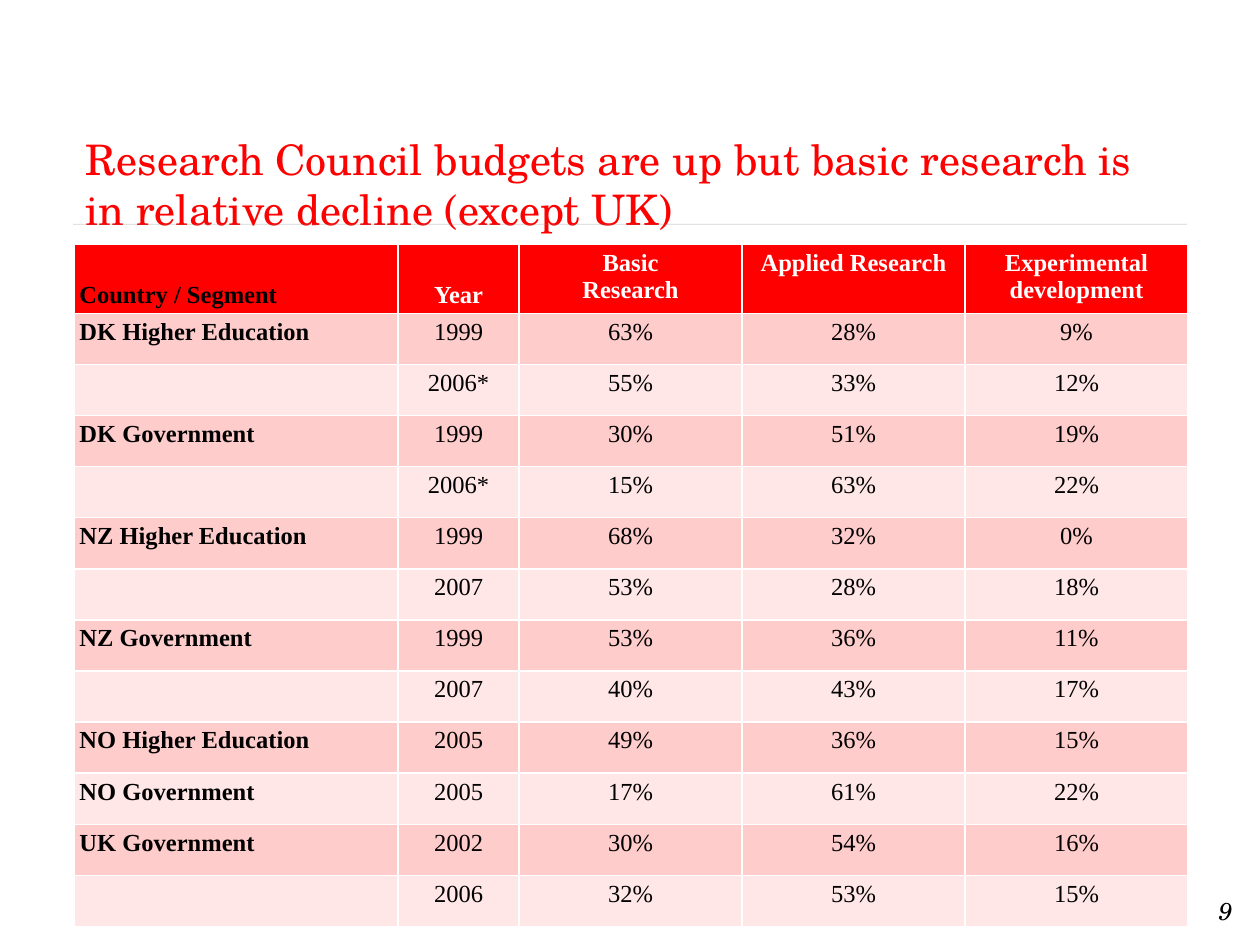
from pptx import Presentation
from pptx.dml.color import RGBColor
from pptx.enum.shapes import MSO_CONNECTOR as Connector
from pptx.enum.text import MSO_ANCHOR as Anchor, MSO_AUTO_SIZE as AutoSize, PP_ALIGN as Align
from pptx.oxml.ns import qn
from pptx.util import Inches, Pt
from lxml.etree import SubElement

SERIF = "TeX Gyre Schola"
TABLE_FONT = "Times New Roman"
RED, BLACK, WHITE, GREY = "FF0000", "000000", "FFFFFF", "808080"
BANDS = ("FFCCCC", "FFE7E7")

HEADINGS = ("Country / Segment", "Year", "Basic\nResearch",
            "Applied Research", "Experimental development")
BUDGETS = (
    ("DK Higher Education", "1999", 63, 28, 9),
    ("", "2006*", 55, 33, 12),
    ("DK Government", "1999", 30, 51, 19),
    ("", "2006*", 15, 63, 22),
    ("NZ Higher Education", "1999", 68, 32, 0),
    ("", "2007", 53, 28, 18),
    ("NZ Government", "1999", 53, 36, 11),
    ("", "2007", 40, 43, 17),
    ("NO Higher Education", "2005", 49, 36, 15),
    ("NO Government", "2005", 17, 61, 22),
    ("UK Government", "2002", 30, 54, 16),
    ("", "2006", 32, 53, 15),
)
COLUMN_WIDTHS = (2.57, 0.96, 1.77, 1.77, 1.77)
HEADER_HEIGHT, TABLE_HEIGHT = 0.5, 5.37


def color(hex_code):
    return RGBColor.from_string(hex_code)


def style(paragraph, font_name, size, hex_code, bold=False, italic=False, align=Align.LEFT):
    paragraph.alignment = align
    font = paragraph.font
    font.name, font.size = font_name, Pt(size)
    font.bold, font.italic = bold, italic
    font.color.rgb = color(hex_code)


def add_title(slide, text):
    title = slide.shapes.title
    title.left, title.top = Inches(0.58), Inches(1.17)
    title.width, title.height = Inches(8.83), Inches(0.58)
    frame = title.text_frame
    frame.text = text
    frame.auto_size = AutoSize.NONE
    frame.vertical_anchor = Anchor.MIDDLE
    style(frame.paragraphs[0], SERIF, 24, RED)


def add_rule(slide, y):
    rule = slide.shapes.add_connector(
        Connector.STRAIGHT, Inches(0.58), Inches(y), Inches(9.42), Inches(y))
    rule.line.width = Pt(0.5)
    rule.line.color.rgb = color(GREY)
    properties = rule._element.spPr
    tint = properties.find(".//" + qn("a:srgbClr"))
    SubElement(tint, qn("a:alpha"), val="35000")
    SubElement(properties, qn("a:effectLst"))


def add_page_number(slide, number):
    box = slide.shapes.add_textbox(Inches(8.7), Inches(7.06), Inches(1.18), Inches(0.33))
    frame = box.text_frame
    frame.word_wrap = True
    frame.text = number
    style(frame.paragraphs[0], SERIF, 14, BLACK, italic=True, align=Align.RIGHT)


def fill_cell(cell, text, background, text_color, bold, align, anchor=Anchor.TOP):
    cell.fill.solid()
    cell.fill.fore_color.rgb = color(background)
    cell.margin_left = cell.margin_right = Inches(0.04)
    cell.margin_top = cell.margin_bottom = Inches(0.04)
    cell.vertical_anchor = anchor
    cell.text = text
    for paragraph in cell.text_frame.paragraphs:
        style(paragraph, TABLE_FONT, 14, text_color, bold=bold, align=align)


def add_budget_table(slide):
    table = slide.shapes.add_table(
        len(BUDGETS) + 1, len(HEADINGS), Inches(0.59), Inches(1.94),
        Inches(sum(COLUMN_WIDTHS)), Inches(TABLE_HEIGHT)).table
    for column, width in zip(table.columns, COLUMN_WIDTHS):
        column.width = Inches(width)
    for row in table.rows:
        row.height = Inches((TABLE_HEIGHT - HEADER_HEIGHT) / len(BUDGETS))
    table.rows[0].height = Inches(HEADER_HEIGHT)

    # Header: the one-line labels of the first two columns sit at the bottom
    for col, heading in enumerate(HEADINGS):
        fill_cell(table.cell(0, col), heading, RED,
                  WHITE if col else BLACK, True,
                  Align.CENTER if col else Align.LEFT,
                  Anchor.BOTTOM if col < 2 else Anchor.TOP)

    # Body: bold segment names, centred figures, alternating bands
    for row, (segment, year, *shares) in enumerate(BUDGETS, start=1):
        values = (segment, year, *(f"{share}%" for share in shares))
        for col, value in enumerate(values):
            fill_cell(table.cell(row, col), value, BANDS[(row - 1) % 2], BLACK,
                      col == 0, Align.CENTER if col else Align.LEFT)


def main():
    deck = Presentation()
    deck.slide_width, deck.slide_height = Inches(10), Inches(7.5)
    slide = deck.slides.add_slide(deck.slide_layouts[5])
    add_rule(slide, 1.78)
    add_page_number(slide, "9")
    add_title(slide, "Research Council budgets are up but basic research is "
                     "in relative decline (except UK)")
    add_budget_table(slide)
    deck.save("out.pptx")


if __name__ == "__main__":
    main()
